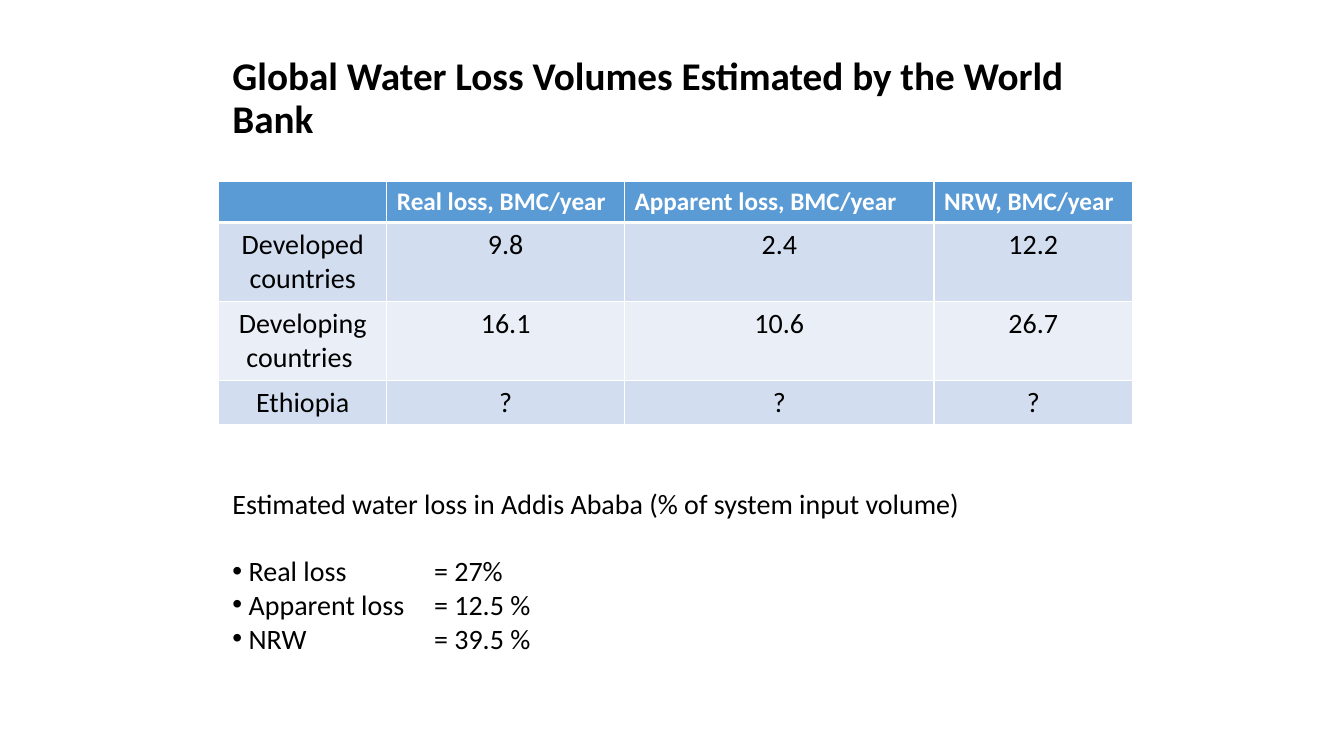
from lxml import etree
from pptx import Presentation
from pptx.dml.color import RGBColor
from pptx.enum import text as t
from pptx.oxml import ns
from pptx.util import Cm, Pt

COLORS = {"ink": "000000", "paper": "FFFFFF", "header": "5B9BD5",
          "band_dark": "D2DEEF", "band_light": "EAEFF7"}
FONT = "Calibri"

LOSSES = [
    ["", "Real loss, BMC/year", "Apparent loss, BMC/year", "NRW, BMC/year"],
    ["Developed countries", "9.8", "2.4", "12.2"],
    ["Developing countries ", "16.1", "10.6", "26.7"],
    ["Ethiopia", "?", "?", "?"],
]
COLUMN_WIDTHS = [4.24, 5.99, 7.8, 5]
ROW_HEIGHTS = [1.04, 1.99, 1.99, 1.12]
ADDIS_ABABA = [("Real loss", "27%"), ("Apparent loss", "12.5 %"), ("NRW", "39.5 %")]


def rgb(name):
    return RGBColor.from_string(COLORS[name])


def style(paragraph, size, color="ink", bold=False):
    font = paragraph.font
    font.name, font.size, font.bold = FONT, Pt(size), bold
    font.color.rgb = rgb(color)


def add_xml(parent, tag, **attributes):
    return etree.SubElement(parent, ns.qn(tag), attributes)


def border_cell(cell, is_header, below_header):
    """Draw white cell edges, with a thick rule under the header."""
    properties = cell._tc.get_or_add_tcPr()
    for index, side in enumerate("LRTB"):
        thick = (is_header and side == "B") or (below_header and side == "T")
        edge = add_xml(properties, f"a:ln{side}", w=str(Pt(3 if thick else 1)))
        add_xml(add_xml(edge, "a:solidFill"), "a:srgbClr", val=COLORS["paper"])
        properties.insert(index, edge)


def add_title(slide, left, top, width, height):
    frame = slide.shapes.add_textbox(Cm(left), Cm(top), Cm(width), Cm(height)).text_frame
    frame.word_wrap = True
    frame.vertical_anchor = t.MSO_ANCHOR.MIDDLE
    heading = frame.paragraphs[0]
    heading.text = "Global Water Loss Volumes Estimated by the World Bank"
    heading.line_spacing = 0.9
    style(heading, 28, bold=True)


def add_loss_table(slide, left, top):
    table = slide.shapes.add_table(
        len(LOSSES), len(COLUMN_WIDTHS), Cm(left), Cm(top),
        Cm(sum(COLUMN_WIDTHS)), Cm(sum(ROW_HEIGHTS))).table
    for column, width in zip(table.columns, COLUMN_WIDTHS):
        column.width = Cm(width)
    for r, (row, height, values) in enumerate(zip(table.rows, ROW_HEIGHTS, LOSSES)):
        row.height = Cm(height)
        band = "header" if r == 0 else "band_dark" if r % 2 else "band_light"
        for cell, value in zip(row.cells, values):
            cell.text = value
            cell.fill.solid()
            cell.fill.fore_color.rgb = rgb(band)
            border_cell(cell, r == 0, r == 1)
            entry = cell.text_frame.paragraphs[0]
            if r == 0:
                style(entry, 18, "paper", bold=True)
            else:
                style(entry, 20)
                entry.alignment = t.PP_ALIGN.CENTER


def add_addis_ababa(slide, left, top, width, height):
    frame = slide.shapes.add_textbox(Cm(left), Cm(top), Cm(width), Cm(height)).text_frame
    frame.word_wrap = False
    intro = frame.paragraphs[0]
    intro.text = "Estimated water loss in Addis Ababa (% of system input volume)"
    style(intro, 20)
    for index, (loss, share) in enumerate(ADDIS_ABABA):
        item = frame.add_paragraph()
        item.text = f" {loss}\t= {share}"
        # Bullet, and a tab stop that lines up the shares
        properties = item._p.get_or_add_pPr()
        add_xml(properties, "a:buFont", typeface="Arial")
        add_xml(properties, "a:buChar", char="•")
        add_xml(add_xml(properties, "a:tabLst"), "a:tab", pos=str(Cm(5.08)), algn="l")
        style(item, 20)
        if index == 0:
            item.space_before = Pt(24)


def main():
    deck = Presentation()
    deck.slide_width, deck.slide_height = Cm(33.87), Cm(19.05)
    slide = deck.slides.add_slide(deck.slide_layouts[6])
    add_title(slide, 5.61, 1.4, 22.86, 2.21)
    add_loss_table(slide, 5.51, 4.57)
    add_addis_ababa(slide, 5.61, 12.14, 19, 4.52)
    deck.save("out.pptx")


if __name__ == "__main__":
    main()
